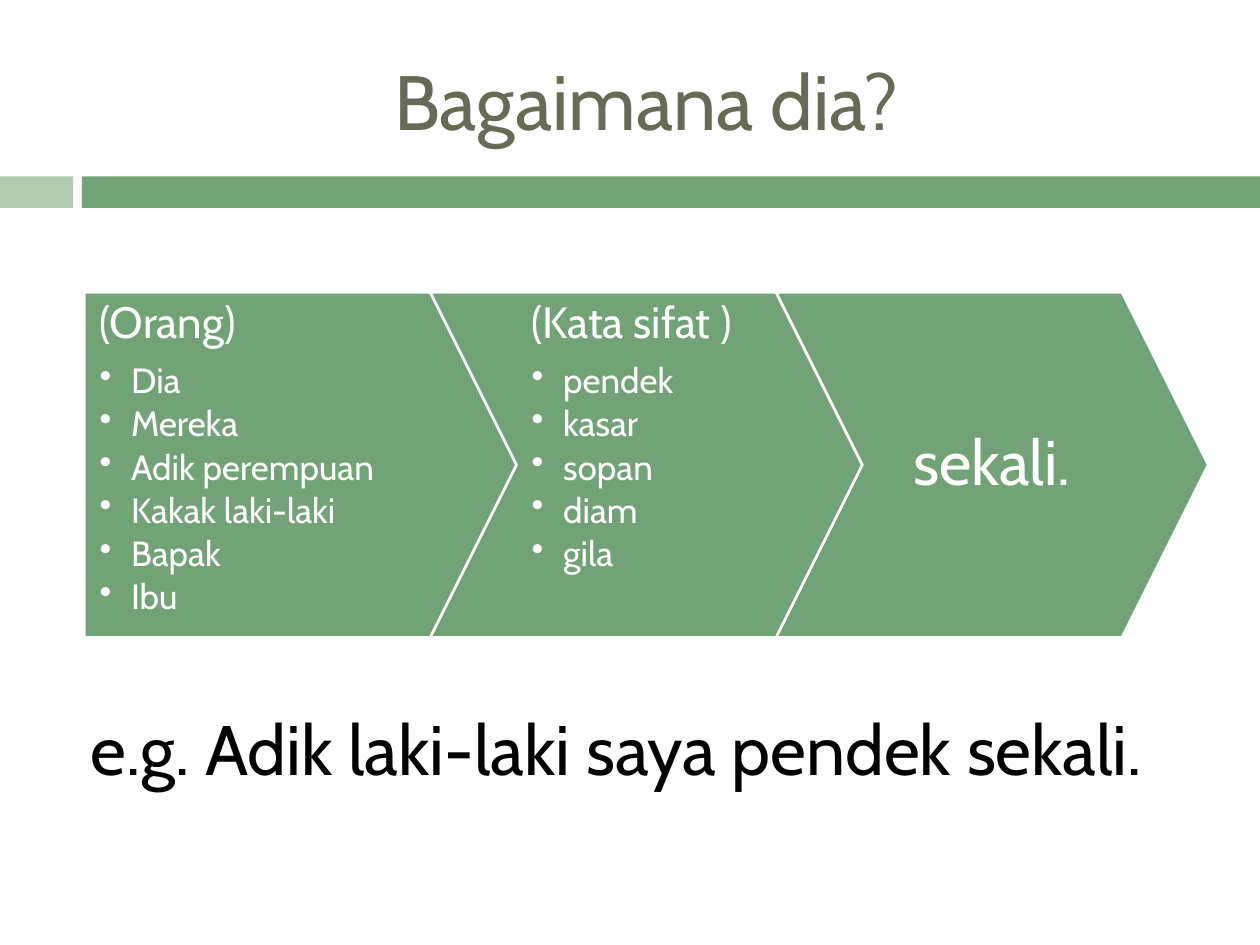
"""Build the sentence-pattern slide "Bagaimana dia?"."""
from lxml.etree import SubElement
from pptx import Presentation
from pptx.dml.color import RGBColor
from pptx.enum.shapes import MSO_SHAPE as Shape
from pptx.enum.text import MSO_ANCHOR as Anchor, PP_ALIGN as Align
from pptx.oxml.ns import qn
from pptx.util import Inches, Pt

TITLE = "Bagaimana dia?"
STEPS = [
    ("(Orang)", ["Dia", "Mereka", "Adik perempuan", "Kakak laki-laki", "Bapak", "Ibu"]),
    ("(Kata sifat )", ["pendek", "kasar", "sopan", "diam", "gila"]),
    ("sekali.", []),
]
SAMPLE = "e.g. Adik laki-laki saya pendek sekali."
COLORS = {"green": "72A376", "pale": "B0CCB0", "olive": "676A55",
          "white": "FFFFFF", "black": "000000"}
FONT = "Cabin"
LEFT, TOP, WIDTH, HEIGHT = 0.67, 2.32, 3.43, 2.74
POINT = HEIGHT / 4
PITCH = WIDTH - POINT


def tint(name):
    return RGBColor.from_string(COLORS[name])


def add_shape(slide, kind, box, color, edge=None):
    shape = slide.shapes.add_shape(kind, *map(Inches, box))
    shape.shadow.inherit = False
    shape.fill.solid()
    shape.fill.fore_color.rgb = tint(color)
    if edge:
        shape.line.color.rgb = tint(edge)
        shape.line.width = Pt(1.5)
    else:
        shape.line.fill.background()
    return shape


def add_frame(slide, box, inset=(0.1, 0.05, 0.1, 0.05), anchor=Anchor.TOP):
    frame = slide.shapes.add_textbox(*map(Inches, box)).text_frame
    frame.word_wrap = True
    frame.vertical_anchor = anchor
    (frame.margin_left, frame.margin_top,
     frame.margin_right, frame.margin_bottom) = map(Inches, inset)
    return frame


def add_text(frame, text, size, color, align=Align.LEFT, line=None, after=0, bullet=False):
    para = frame.paragraphs[0] if not frame.text else frame.add_paragraph()
    para.alignment = align
    para.line_spacing = line
    para.space_after = Pt(size * after)
    run = para.add_run()
    run.text = text
    run.font.name = FONT
    run.font.size = Pt(size)
    run.font.color.rgb = tint(color)
    if bullet:
        para.level = 1
        props = para._p.get_or_add_pPr()
        props.set("marL", str(Inches(0.25)))
        props.set("indent", str(-Inches(0.25)))
        SubElement(props, qn("a:buChar")).set("char", "•")


def add_step(slide, index, head, items):
    left = LEFT + index * PITCH
    kind = Shape.CHEVRON if index else Shape.PENTAGON
    arrow = add_shape(slide, kind, (left, TOP, WIDTH, HEIGHT), "green", "white")
    arrow.adjustments[0] = 0.25

    start = left + POINT if index else left
    width = WIDTH - 2 * POINT if index else WIDTH - POINT / 2
    right = 0.12 if index else 0.48
    pad = 0.07 if items else 0.1
    frame = add_frame(slide, (start, TOP, width, HEIGHT), (0.12, pad, right, pad),
                      Anchor.TOP if items else Anchor.MIDDLE)
    add_text(frame, head, 25 if items else 36, "white",
             align=Align.LEFT if items else Align.CENTER, line=0.9, after=0.35)
    for item in items:
        add_text(frame, item, 20, "white", line=0.9, after=0.15, bullet=True)


def main():
    deck = Presentation()
    deck.slide_width, deck.slide_height = Inches(10), Inches(7.5)
    slide = deck.slides.add_slide(deck.slide_layouts[6])

    add_shape(slide, Shape.RECTANGLE, (0, 1.4, 0.58, 0.25), "pale")
    add_shape(slide, Shape.RECTANGLE, (0.65, 1.4, 9.35, 0.25), "green")
    title = add_frame(slide, (LEFT, 0.25, 8.92, 1.08), anchor=Anchor.MIDDLE)
    add_text(title, TITLE, 44, "olive", align=Align.CENTER)

    for index, (head, items) in enumerate(STEPS):
        add_step(slide, index, head, items)

    add_text(add_frame(slide, (0.62, 5.55, 8.98, 0.77)), SAMPLE, 40, "black")
    deck.save("out.pptx")


if __name__ == "__main__":
    main()
